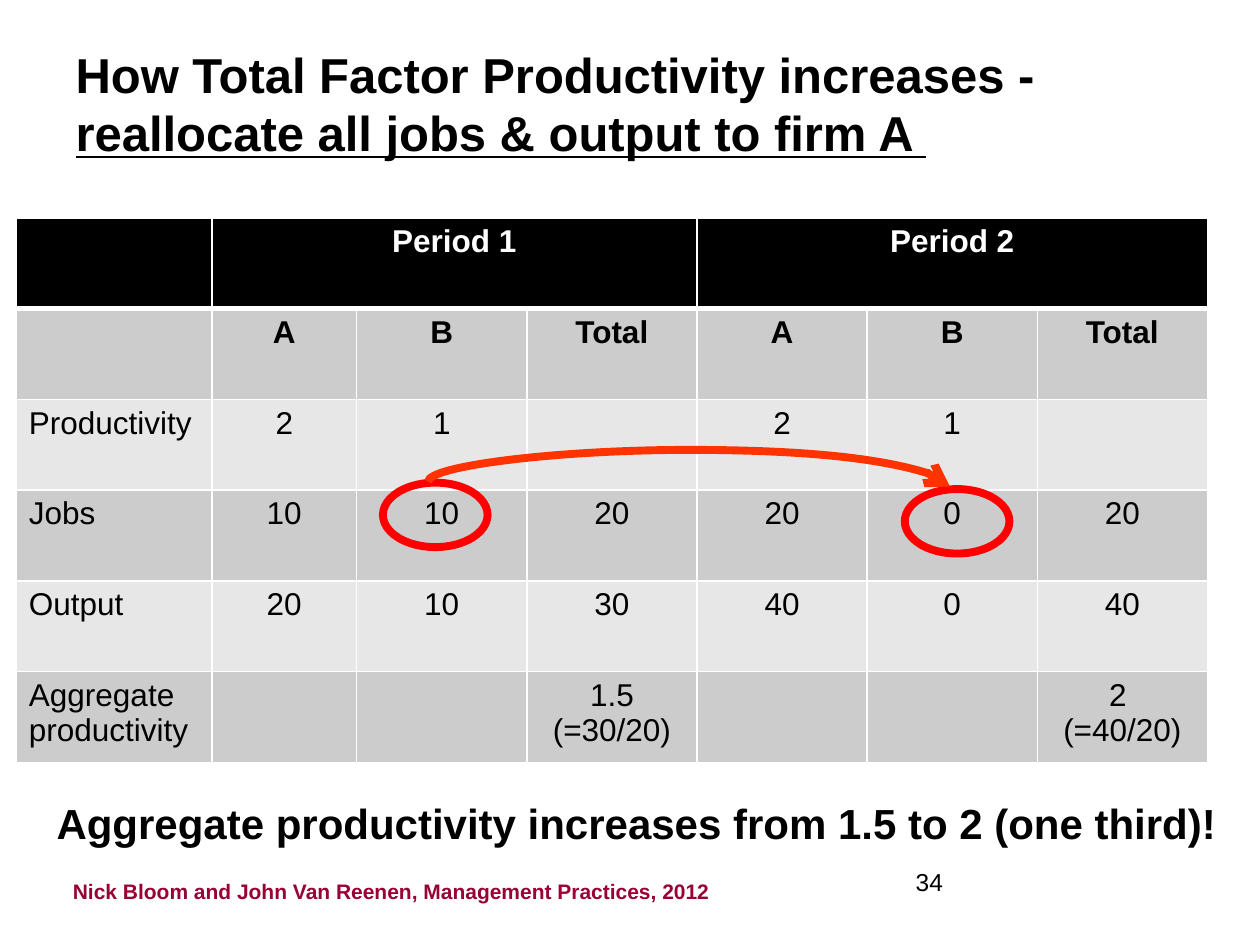
from lxml import etree
from pptx import Presentation
from pptx.dml.color import RGBColor
from pptx.enum import shapes, text
from pptx.oxml import ns
from pptx.util import Cm, Pt

COLORS = {
    "black": "000000", "white": "FFFFFF", "dark_band": "CCCCCC",
    "light_band": "E7E7E7", "ring": "FF0000", "arrow": "FF3300",
    "credit": "990033",
}
COLUMNS = [3.94, 2.92] + [3.43] * 5
ROW_HEIGHT = 1.83
ROWS = [
    ["", "Period 1", "", "", "Period 2", "", ""],
    ["", "A", "B", "Total", "A", "B", "Total"],
    ["Productivity", "2", "1", "", "2", "1", ""],
    ["Jobs", "10", "10", "20", "20", "0", "20"],
    ["Output", "20", "10", "30", "40", "0", "40"],
    ["Aggregate productivity", "", "", "1.5 (=30/20)", "", "", "2 \n(=40/20)"],
]


def rgb(name):
    return RGBColor.from_string(COLORS[name])


def set_font(p, size, color="black", bold=False):
    f = p.font
    f.name, f.size, f.bold = "Arial", Pt(size), bold
    f.color.rgb = rgb(color)


def add_child(parent, tag, **attrs):
    return etree.SubElement(parent, ns.qn(tag), attrs)


def add_title(s, plain, underlined):
    sp = s.shapes.title
    sp.left, sp.top, sp.width, sp.height = Cm(1.27), Cm(0.76), Cm(22.86), Cm(1.9)
    tf = sp.text_frame
    tf.auto_size = text.MSO_AUTO_SIZE.NONE
    tf.vertical_anchor = text.MSO_ANCHOR.TOP
    p = tf.paragraphs[0]
    p.alignment = text.PP_ALIGN.LEFT
    set_font(p, 28, bold=True)
    p.add_run().text = plain
    r = p.add_run()
    r.text = underlined
    r.font.underline = True


def add_text(s, words, left, top, width, height, size, color="black", bold=False, wrap=False):
    tf = s.shapes.add_textbox(Cm(left), Cm(top), Cm(width), Cm(height)).text_frame
    tf.word_wrap = wrap
    tf.text = words
    set_font(tf.paragraphs[0], size, color, bold)


def set_borders(cell, bottom):
    tc_pr = cell._tc.get_or_add_tcPr()
    for side, points in (("L", 1), ("R", 1), ("T", 1), ("B", bottom)):
        ln = add_child(tc_pr, f"a:ln{side}", w=str(Pt(points)))
        add_child(add_child(ln, "a:solidFill"), "a:srgbClr", val=COLORS["white"])


def format_cell(cell, row, col):
    header = row == 0
    set_borders(cell, bottom=3 if header else 1)
    cell.fill.solid()
    cell.fill.fore_color.rgb = rgb(
        "black" if header else "dark_band" if row % 2 else "light_band")
    for p in cell.text_frame.paragraphs:
        p.alignment = text.PP_ALIGN.CENTER if col else text.PP_ALIGN.LEFT
        set_font(p, 18, "white" if header else "black", bold=row < 2)


def add_productivity_table(s):
    table = s.shapes.add_table(
        len(ROWS), len(COLUMNS), Cm(0.33), Cm(4.39),
        Cm(sum(COLUMNS)), Cm(ROW_HEIGHT * len(ROWS))).table
    for column, width in zip(table.columns, COLUMNS):
        column.width = Cm(width)
    for i, values in enumerate(ROWS):
        table.rows[i].height = Cm(ROW_HEIGHT)
        for j, value in enumerate(values):
            cell = table.cell(i, j)
            cell.text = value
            format_cell(cell, i, j)
    for first in (1, 4):
        table.cell(0, first).merge(table.cell(0, first + 2))


def add_ring(s, left, top):
    sp = s.shapes.add_shape(
        shapes.MSO_SHAPE.OVAL, Cm(left), Cm(top), Cm(2.11), Cm(1.3))
    sp.shadow.inherit = False
    sp.fill.background()
    sp.line.color.rgb = rgb("ring")
    sp.line.width = Pt(4.5)


def add_arc_arrow(s, left, top, width, height, bulge):
    """Draw an upright curve turned by 270 degrees, so that it arches over its ends."""
    cxn = s.shapes.add_connector(
        shapes.MSO_CONNECTOR.CURVE,
        Cm(left + width), Cm(top), Cm(left), Cm(top + height))
    cxn.line.color.rgb = rgb("arrow")
    cxn.line.width = Pt(4.5)
    add_child(cxn.line._get_or_add_ln(), "a:tailEnd", type="arrow")
    sp_pr = cxn._element.spPr
    add_child(sp_pr, "a:effectLst")
    sp_pr.find(ns.qn("a:xfrm")).set("rot", str(270 * 60000))
    guides = sp_pr.find(ns.qn("a:prstGeom")).get_or_add_avLst()
    add_child(guides, "a:gd", name="adj1", fmla=f"val {round(-bulge / width * 100000)}")


def main():
    prs = Presentation()
    prs.slide_width, prs.slide_height = Cm(25.4), Cm(19.05)
    s = prs.slides.add_slide(prs.slide_layouts[5])
    add_text(s, "Nick Bloom and John Van Reenen, Management Practices, 2012",
             1.22, 17.58, 13.46, 0.76, 12, "credit", bold=True)
    add_title(s, "How Total Factor Productivity increases -  ",
              "reallocate all jobs & output to firm A ")
    add_productivity_table(s)
    add_text(s, "34", 18.21, 17.35, 5.28, 1.27, 14, wrap=True)
    add_text(s, "Aggregate productivity increases from 1.5 to 2 (one third)!",
             0.89, 15.95, 24.1, 1.27, 24, bold=True)
    add_ring(s, 7.72, 9.73)
    add_ring(s, 18.24, 9.86)
    add_arc_arrow(s, 13.84, 4.5, 0.1, 10.52, bulge=0.64)
    prs.save("out.pptx")


if __name__ == "__main__":
    main()
